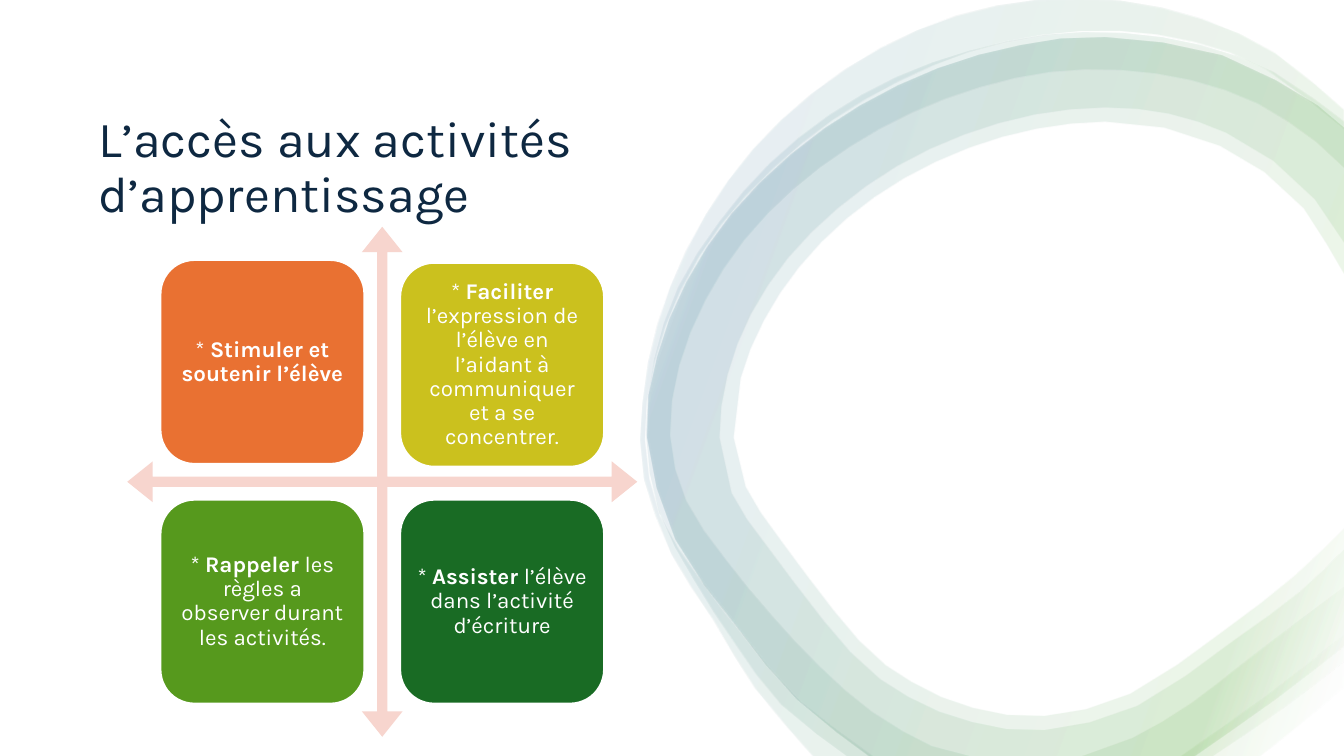
from dataclasses import dataclass
from math import ceil, dist

from lxml import etree
from pptx import Presentation
from pptx.dml.color import RGBColor
from pptx.enum.shapes import MSO_SHAPE
from pptx.enum.text import MSO_ANCHOR, MSO_AUTO_SIZE, PP_ALIGN
from pptx.oxml.ns import qn
from pptx.util import Pt

ROUND, CROSS = MSO_SHAPE.ROUNDED_RECTANGLE, MSO_SHAPE.QUAD_ARROW
MIDDLE, NO_FIT = MSO_ANCHOR.MIDDLE, MSO_AUTO_SIZE.NONE
LEFT, CENTER = PP_ALIGN.LEFT, PP_ALIGN.CENTER


@dataclass(frozen=True)
class Theme:
    font: str = "Karla"
    head: int = 36
    body: int = 16
    ink: str = "0E2841"
    white: str = "FFFFFF"
    arrow: str = "F7D5CE"
    tiles: tuple = ("E97132", "CBC11E", "56991D", "196B24")
    fade: tuple = ((2, "FFFFFF"), (16, "4EA72E"), (85, "156082"), (100, "FFFFFF"))
    alpha: int = 10


THEME = Theme()
TITLE = "L’accès aux activités d’apprentissage"
ROLES = [
    ("Stimuler et soutenir l’élève", ""),
    ("Faciliter ", "l’expression de l’élève en l’aidant à communiquer et a se concentrer."),
    ("Rappeler ", "les règles a observer durant les activités."),
    ("Assister ", "l’élève dans l’activité d’écriture"),
]

# Ring edges, in hundredths of an inch (0.72 pt).
UNIT = 0.72
CHORD = 60
CORE = [(862, 750), (791, 694), (732, 623), (670, 535), (642, 434), (652, 354), (681, 280),
        (726, 212), (785, 153), (853, 105), (930, 68), (1012, 45), (1096, 37), (1212, 55),
        (1307, 105), (1333, 127)]
TAIL = [(1333, 641), (1266, 693), (1185, 750)]
HALO = [
    [(808, 750), (750, 682), (709, 615), (667, 549), (640, 475), (636, 436), (644, 359),
     (666, 284), (701, 213), (748, 148), (806, 93), (874, 48), (949, 16), (1030, 0),
     (1112, 1), (1192, 19), (1265, 53), (1333, 109)],
    [(1333, 128), (1256, 69), (1185, 42), (1110, 31), (1034, 35), (961, 52), (892, 81),
     (827, 119), (768, 167), (716, 223), (676, 288), (650, 360), (641, 436), (656, 511),
     (697, 576), (745, 638), (795, 695), (868, 750)],
]
HALO_END = [
    [(1333, 629), (1261, 686), (1170, 750)],
    [(1249, 750), (1288, 719), (1333, 681)],
]
WIDE = [
    [(840, 750), (775, 699), (729, 638), (689, 576), (654, 508), (641, 432), (649, 357),
     (673, 285), (714, 220), (763, 163), (822, 115), (889, 77), (961, 51), (1036, 35),
     (1113, 33), (1190, 45), (1263, 72), (1333, 121)],
    [(1333, 167), (1305, 141), (1247, 103), (1181, 80), (1111, 70), (1041, 72), (972, 87),
     (905, 112), (843, 146), (787, 188), (738, 239), (700, 298), (674, 363), (665, 432),
     (681, 497), (720, 555), (766, 611), (814, 662), (865, 706), (924, 740), (962, 750)],
]
WIDE_END = [
    [(1333, 582), (1239, 653), (1182, 697), (1123, 732), (1073, 750)],
    [(1203, 750), (1276, 700), (1333, 656)],
]
MID = [(1333, 241), (1304, 198), (1263, 160), (1216, 132), (1159, 113), (1096, 107),
       (1026, 114), (956, 134), (890, 165), (831, 207), (782, 256), (745, 312), (722, 372),
       (714, 434), (726, 489), (765, 547), (844, 647), (901, 691), (964, 716),
       (1036, 724), (1128, 700), (1221, 637), (1289, 587), (1333, 545)]
SLIM = [(1333, 272), (1293, 207), (1254, 171), (1210, 145), (1155, 127), (1096, 121),
        (1028, 128), (961, 147), (897, 177), (840, 217), (793, 265), (758, 318), (735, 375),
        (728, 434), (740, 483), (777, 539), (852, 635), (904, 676), (965, 702),
        (1036, 710), (1121, 688), (1213, 626), (1284, 571), (1333, 524)]
BANDS = [[HALO, HALO_END], [WIDE, WIDE_END], [[CORE, MID, TAIL]], [[CORE, SLIM, TAIL]]]


def rgb(code):
    return RGBColor.from_string(code)


def curve(knots):
    """Return points on a Catmull-Rom spline, cutting only long spans."""
    ends = [knots[0], *knots, knots[-1]]
    points = [knots[0]]
    for a, b, c, d in zip(ends, ends[1:], ends[2:], ends[3:]):
        steps = ceil(dist(b, c) / CHORD)
        for step in range(1, steps + 1):
            t = step / steps
            points.append(tuple(
                q + t / 2 * (r - p + t * (2 * p - 5 * q + 4 * r - s
                                          + t * (3 * (q - r) + s - p)))
                for p, q, r, s in zip(a, b, c, d)))
    return points


def fade(fill):
    """Give a fill the sheer four-stop gradient of the ring."""
    fill.gradient()
    fill.gradient_angle = 160
    stops = fill._xPr.find(qn("a:gradFill")).find(qn("a:gsLst"))
    for old in list(stops):
        stops.remove(old)
    for place, code in THEME.fade:
        stop = etree.SubElement(stops, qn("a:gs"), pos=str(place * 1000))
        color = etree.SubElement(stop, qn("a:srgbClr"), val=code)
        etree.SubElement(color, qn("a:alpha"), val=str(THEME.alpha * 1000))


def add_ring(slide, left, top):
    for band in BANDS:
        loops = [[(Pt(left + x * UNIT), Pt(top + y * UNIT))
                  for edge in loop for x, y in curve(edge)] for loop in band]
        outline = slide.shapes.build_freeform(*loops[0][0], scale=1.0)
        for i, loop in enumerate(loops):
            if i:
                outline.move_to(*loop[0])
            outline.add_line_segments(loop[1:], close=True)
        shape = outline.convert_to_shape()
        shape.shadow.inherit = False
        shape.line.fill.background()
        fade(shape.fill)


def style(para, size, color, align):
    para.alignment = align
    para.line_spacing = 0.9
    para.font.name = THEME.font
    para.font.size = Pt(size)
    para.font.color.rgb = rgb(color)


def add_title(slide, left, top, width, height):
    title = slide.shapes.title
    title.left, title.top = Pt(left), Pt(top)
    title.width, title.height = Pt(width), Pt(height)
    frame = title.text_frame
    frame.text = TITLE
    frame.word_wrap = True
    frame.auto_size = NO_FIT
    frame.vertical_anchor = MIDDLE
    style(frame.paragraphs[0], THEME.head, THEME.ink, LEFT)


def add_block(slide, kind, left, top, size, color):
    shape = slide.shapes.add_shape(kind, Pt(left), Pt(top), Pt(size), Pt(size))
    shape.shadow.inherit = False
    shape.fill.solid()
    shape.fill.fore_color.rgb = rgb(color)
    return shape


def add_tile(slide, left, top, size, color, role):
    tile = add_block(slide, ROUND, left, top, size, color)
    tile.line.color.rgb = rgb(THEME.white)
    tile.line.width = Pt(1.5)
    frame = tile.text_frame
    frame.word_wrap = True
    frame.vertical_anchor = MIDDLE
    # The rounded corners already inset the text by about 7 pt.
    frame.margin_left = frame.margin_right = Pt(5)
    frame.margin_top = frame.margin_bottom = Pt(5)
    para = frame.paragraphs[0]
    style(para, THEME.body, THEME.white, CENTER)
    for text, bold in zip(("* ", *role), (False, True, False)):
        if text:
            run = para.add_run()
            run.text = text
            run.font.bold = bold


def add_matrix(slide, left, top, size):
    cross = add_block(slide, CROSS, left, top, size, THEME.arrow)
    cross.line.fill.background()
    for i, ratio in enumerate((0.02, 0.04, 0.05)):
        cross.adjustments[i] = ratio
    edge, side, step = size * 0.065, size * 0.4, size * 0.47
    for i, (color, role) in enumerate(zip(THEME.tiles, ROLES)):
        row, col = divmod(i, 2)
        drop = 2 if i == 1 else 0
        add_tile(slide, left + edge + col * step, top + edge + row * step + drop,
                 side, color, role)


def main():
    deck = Presentation()
    deck.slide_width, deck.slide_height = Pt(960), Pt(540)
    slide = deck.slides.add_slide(deck.slide_layouts[5])
    add_title(slide, 63.4, 63.4, 598.3, 114.5)
    add_ring(slide, 0, 0)
    add_matrix(slide, 90.9, 162, 364.3)
    deck.save("out.pptx")


if __name__ == "__main__":
    main()
